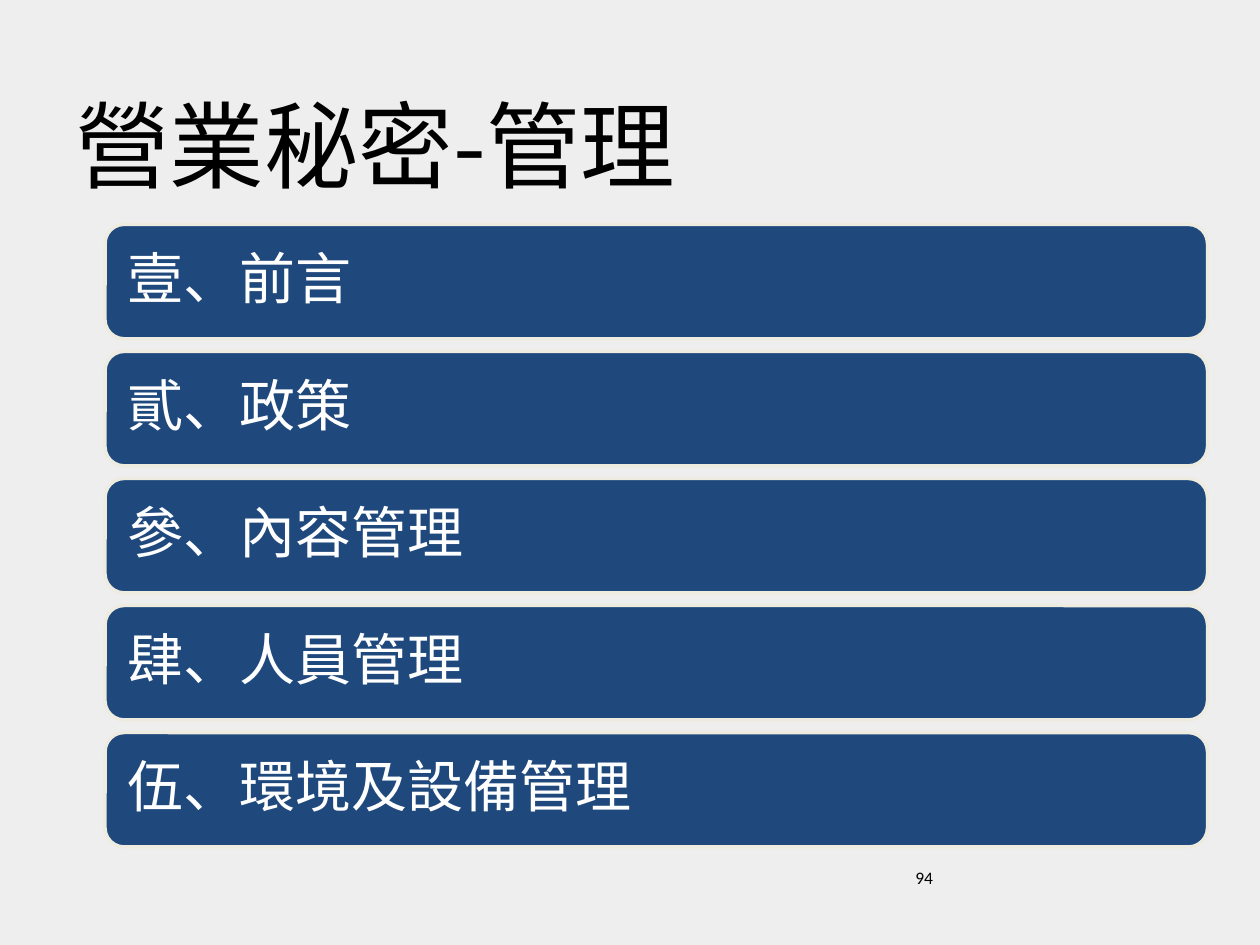
from dataclasses import dataclass

from pptx import Presentation
from pptx.dml.color import RGBColor
from pptx.enum.shapes import MSO_SHAPE as Shape
from pptx.enum.text import MSO_ANCHOR as Anchor, PP_ALIGN as Align
from pptx.util import Pt


@dataclass(frozen=True)
class Theme:
    background: str = "EEEEEE"
    bar: str = "1F497D"
    bar_edge: str = "EEECE1"
    bar_text: str = "FFFFFF"
    ink: str = "000000"
    title_font: str = "Noto Sans CJK SC"
    body_font: str = "Calibri"
    title_size: float = 54
    bar_size: float = 32
    number_size: float = 10


class SlideBuilder:
    def __init__(self, slide, theme):
        self.slide = slide
        self.theme = theme
        fill = slide.background.fill
        fill.solid()
        fill.fore_color.rgb = RGBColor.from_string(theme.background)

    def set_text(self, frame, words, font, size, color, anchor):
        frame.word_wrap = True
        frame.vertical_anchor = anchor
        paragraph = frame.paragraphs[0]
        paragraph.text = words
        paragraph.alignment = Align.LEFT
        paragraph.font.name = font
        paragraph.font.size = Pt(size)
        paragraph.font.color.rgb = RGBColor.from_string(color)
        return paragraph

    def label(self, words, box, font, size, anchor=Anchor.TOP):
        frame = self.slide.shapes.add_textbox(*map(Pt, box)).text_frame
        self.set_text(frame, words, font, size, self.theme.ink, anchor)

    def bar(self, words, box):
        theme = self.theme
        bar = self.slide.shapes.add_shape(Shape.ROUNDED_RECTANGLE, *map(Pt, box))
        bar.shadow.inherit = False
        bar.fill.solid()
        bar.fill.fore_color.rgb = RGBColor.from_string(theme.bar)
        bar.line.color.rgb = RGBColor.from_string(theme.bar_edge)
        bar.line.width = Pt(2)
        frame = bar.text_frame
        # The preset's own text area is already inset by its round corners.
        frame.margin_left = frame.margin_right = Pt(9.6)
        paragraph = self.set_text(frame, words, theme.body_font, theme.bar_size,
                                  theme.bar_text, Anchor.MIDDLE)
        paragraph.line_spacing = 0.9


CHAPTERS = ["壹、前言", "貳、政策", "參、內容管理", "肆、人員管理", "伍、環境及設備管理"]
BAR_LEFT, BAR_TOP, BAR_WIDTH, BAR_HEIGHT = 60, 128.2, 630, 65.4
BAR_STEP = 72.6


def main():
    deck = Presentation()
    deck.slide_width, deck.slide_height = Pt(720), Pt(540)
    theme = Theme()
    builder = SlideBuilder(deck.slides.add_slide(deck.slide_layouts[6]), theme)

    for row, chapter in enumerate(CHAPTERS):
        top = BAR_TOP + row * BAR_STEP
        builder.bar(chapter, (BAR_LEFT, top, BAR_WIDTH, BAR_HEIGHT))
    builder.label("營業秘密-管理", (36, 28, 648, 90), theme.title_font,
                  theme.title_size, Anchor.BOTTOM)
    builder.label("94", (516, 492, 168, 37.5), theme.body_font, theme.number_size)

    deck.save("out.pptx")


if __name__ == "__main__":
    main()
